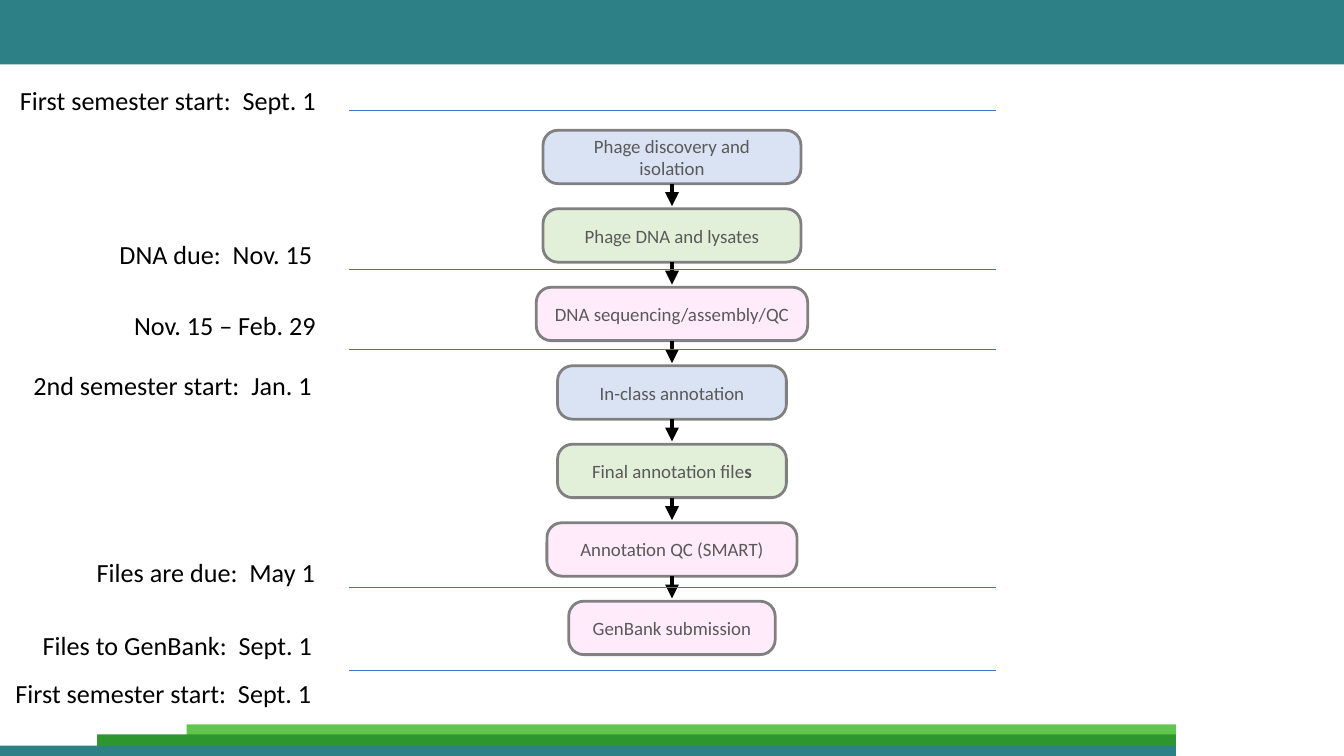
"""Build the phage course timeline slide."""
from dataclasses import dataclass

from lxml.etree import SubElement
from pptx import Presentation
from pptx.dml.color import RGBColor
from pptx.enum.shapes import MSO_CONNECTOR, MSO_SHAPE
from pptx.enum.text import MSO_ANCHOR, MSO_AUTO_SIZE, PP_ALIGN
from pptx.oxml.ns import qn
from pptx.util import Pt


@dataclass(frozen=True)
class Theme:
    teal: str = "2D8085"
    lime: str = "62C54E"
    green: str = "2D962F"
    blue: str = "DAE3F3"
    mint: str = "E2F0D9"
    pink: str = "FFEBFA"
    edge: str = "808080"
    rule: str = "4472C4"
    black: str = "000000"
    grey: str = "595959"
    face: str = "Calibri"
    step: float = 10.1
    date: float = 14


theme = Theme()
deck = Presentation()
deck.slide_width, deck.slide_height = Pt(720), Pt(405)
slide = deck.slides.add_slide(deck.slide_layouts[6])
shapes = slide.shapes


def add_text(para, text, size, color, bold=False):
    run = para.add_run()
    run.text = text
    style = {"name": theme.face, "size": Pt(size), "bold": bold}
    for key, value in style.items():
        setattr(run.font, key, value)
    run.font.color.rgb = RGBColor.from_string(color)


def add_line(x1, y1, x2, y2, color, width):
    line = shapes.add_connector(
        MSO_CONNECTOR.STRAIGHT, Pt(x1), Pt(y1), Pt(x2), Pt(y2))
    line.line.color.rgb = RGBColor.from_string(color)
    line.line.width = Pt(width)
    SubElement(line._element.spPr, qn("a:effectLst"))
    return line


bands = [
    (0, 0, 720, 34.5, theme.teal),
    (100, 388, 530, 7, theme.lime),
    (52, 393.5, 578, 8, theme.green),
    (0, 399.5, 630, 5.5, theme.teal),
]
for left, top, width, height, color in bands:
    band = shapes.add_shape(
        MSO_SHAPE.RECTANGLE, Pt(left), Pt(top), Pt(width), Pt(height))
    band.shadow.inherit = False
    band.fill.solid()
    band.fill.fore_color.rgb = RGBColor.from_string(color)
    band.line.fill.background()

mid, first, pitch, tall = 360, 69.8, 42.05, 28.6
steps = [
    ("Phage discovery and isolation", "", 138.2, theme.blue),
    ("Phage DNA and lysates", "", 138.2, theme.mint),
    ("DNA sequencing/assembly/QC", "", 145.4, theme.pink),
    ("In-class annotation", "", 122.6, theme.blue),
    ("Final annotation file", "s", 122.6, theme.mint),
    ("Annotation QC (SMART)", "", 134, theme.pink),
    ("GenBank submission", "", 110.6, theme.pink),
]
for row, (text, strong, width, color) in enumerate(steps):
    top = first + row * pitch
    box = shapes.add_shape(
        MSO_SHAPE.ROUNDED_RECTANGLE,
        Pt(mid - width / 2), Pt(top), Pt(width), Pt(tall))
    box.adjustments[0] = 0.28
    box.shadow.inherit = False
    box.fill.solid()
    box.fill.fore_color.rgb = RGBColor.from_string(color)
    box.line.color.rgb = RGBColor.from_string(theme.edge)
    box.line.width = Pt(1.5)
    frame = box.text_frame
    for key, value in {"word_wrap": True,
                       "vertical_anchor": MSO_ANCHOR.MIDDLE}.items():
        setattr(frame, key, value)
    para = frame.paragraphs[0]
    para.alignment = PP_ALIGN.CENTER
    add_text(para, text, theme.step, theme.grey)
    if strong:
        add_text(para, strong, theme.step, theme.grey, True)

for row in range(len(steps) - 1):
    top = first + row * pitch + tall
    arrow = add_line(mid, top, mid, top + 12, theme.black, 2.5)
    SubElement(arrow.line._get_or_add_ln(), qn("a:tailEnd"), type="triangle")

for y in (59, 144.5, 187, 314.5, 359):
    add_line(187, y, 533.5, y, theme.rule, 0.5)

right = 177
dates = [
    ("First semester start:  Sept. 1", 3.6, 41.8),
    ("DNA due:  Nov. 15", 56.9, 124),
    ("Nov. 15 – Feb. 29", 64.8, 162),
    ("2nd semester start:  Jan. 1", 10.8, 194.5),
    ("Files are due:  May 1", 44.7, 294.5),
    ("Files to GenBank:  Sept. 1", 15.8, 333.5),
    ("First semester start:  Sept. 1", 1.2, 359.3),
]
for text, left, top in dates:
    label = shapes.add_textbox(Pt(left), Pt(top), Pt(right - left), Pt(24.5))
    frame = label.text_frame
    for key, value in {"word_wrap": False,
                       "auto_size": MSO_AUTO_SIZE.SHAPE_TO_FIT_TEXT}.items():
        setattr(frame, key, value)
    add_text(frame.paragraphs[0], text, theme.date, theme.black)

deck.save("out.pptx")
